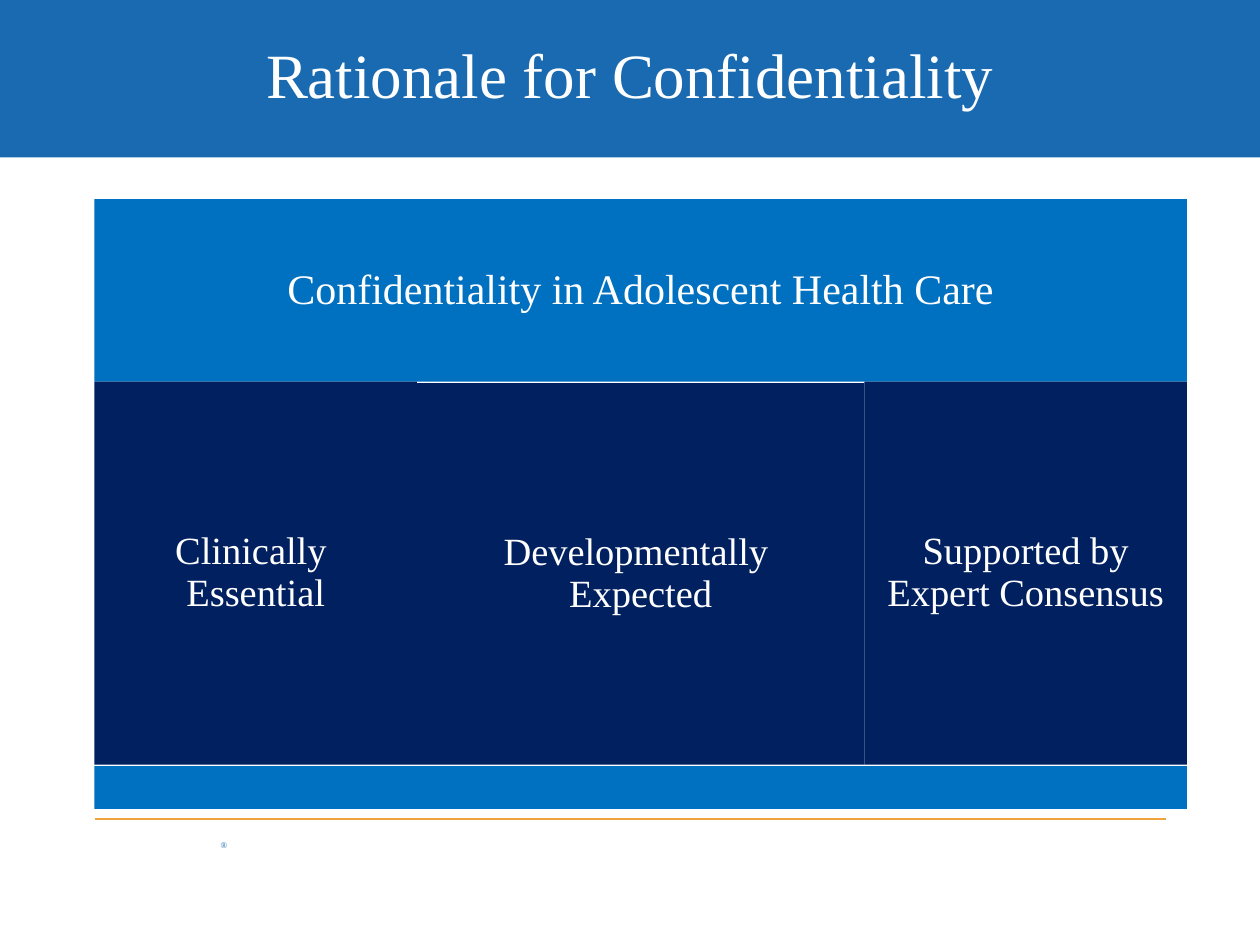
from pptx import Presentation
from pptx.dml.color import RGBColor
from pptx.enum.shapes import MSO_CONNECTOR, MSO_SHAPE
from pptx.enum.text import MSO_ANCHOR, PP_ALIGN
from pptx.oxml.ns import qn
from pptx.util import Inches, Pt
from lxml.etree import SubElement

WIDTH, HEIGHT = 10, 7.5
FONT = "Times New Roman"
COLORS = {
    "banner": "196AB0",
    "panel": "0070C0",
    "pillar": "002060",
    "rule": "EEA33C",
    "text": "FFFFFF",
}

LEFT = 0.75
SIDE, MIDDLE = 2.56, 3.55
PANEL_WIDTH = 2 * SIDE + MIDDLE
HEADER_TOP, PILLAR_TOP, FOOTER_TOP = 1.58, 3.03, 6.08
HAIRLINE = 0.01  # white gap above and below the middle pillar
PILLARS = [
    # text, width, inset from the row's top and bottom
    ("Clinically \vEssential", SIDE, 0),
    ("Developmentally \vExpected", MIDDLE, HAIRLINE),
    ("Supported by Expert Consensus", SIDE, 0),
]


def color(name):
    return RGBColor.from_string(COLORS[name])


def write(shape, text, size, color_name="text", align=PP_ALIGN.CENTER,
          margin=0.1, line_spacing=1.0):
    frame = shape.text_frame
    frame.word_wrap = True
    frame.vertical_anchor = MSO_ANCHOR.MIDDLE
    frame.margin_left = frame.margin_right = Inches(margin)
    frame.margin_top = frame.margin_bottom = Inches(margin)
    paragraph = frame.paragraphs[0]
    paragraph.text = text
    paragraph.alignment = align
    paragraph.line_spacing = line_spacing
    paragraph.font.name = FONT
    paragraph.font.size = Pt(size)
    paragraph.font.color.rgb = color(color_name)


def add_block(slide, left, top, width, height, fill):
    box = map(Inches, (left, top, width, height))
    shape = slide.shapes.add_shape(MSO_SHAPE.RECTANGLE, *box)
    shape.shadow.inherit = False
    shape.fill.solid()
    shape.fill.fore_color.rgb = color(fill)
    shape.line.fill.background()
    return shape


def add_text(slide, left, top, width, height, text, size, **style):
    box = map(Inches, (left, top, width, height))
    write(slide.shapes.add_textbox(*box), text, size, **style)


def add_rule(slide, left, right, y):
    ends = map(Inches, (left, y, right, y))
    line = slide.shapes.add_connector(MSO_CONNECTOR.STRAIGHT, *ends)
    line.line.color.rgb = color("rule")
    line.line.width = Pt(0.75)
    SubElement(line._element.spPr, qn("a:effectLst"))


def add_pillars(slide):
    left = LEFT
    row_height = FOOTER_TOP - PILLAR_TOP - HAIRLINE
    for text, width, inset in PILLARS:
        pillar = add_block(slide, left, PILLAR_TOP + inset, width,
                           row_height - inset, "pillar")
        write(pillar, text, 22, margin=0.09, line_spacing=0.9)
        left += width


def main():
    presentation = Presentation()
    presentation.slide_width = Inches(WIDTH)
    presentation.slide_height = Inches(HEIGHT)
    slide = presentation.slides.add_slide(presentation.slide_layouts[6])

    add_block(slide, 0, 0, WIDTH, HEIGHT / 6, "banner")
    add_text(slide, 1.75, 6.67, 0.25, 0.08, "®", 5, color_name="banner",
             align=PP_ALIGN.LEFT, margin=0)
    add_rule(slide, LEFT, WIDTH - LEFT, 6.5)
    add_text(slide, 0.5, 0.08, WIDTH - 1, 1, "Rationale for Confidentiality", 36)

    header = add_block(slide, LEFT, HEADER_TOP, PANEL_WIDTH,
                       PILLAR_TOP - HEADER_TOP, "panel")
    write(header, "Confidentiality in Adolescent Health Care", 24, line_spacing=0.9)
    add_pillars(slide)
    add_block(slide, LEFT, FOOTER_TOP, PANEL_WIDTH, 0.34, "panel")

    presentation.save("out.pptx")


if __name__ == "__main__":
    main()
